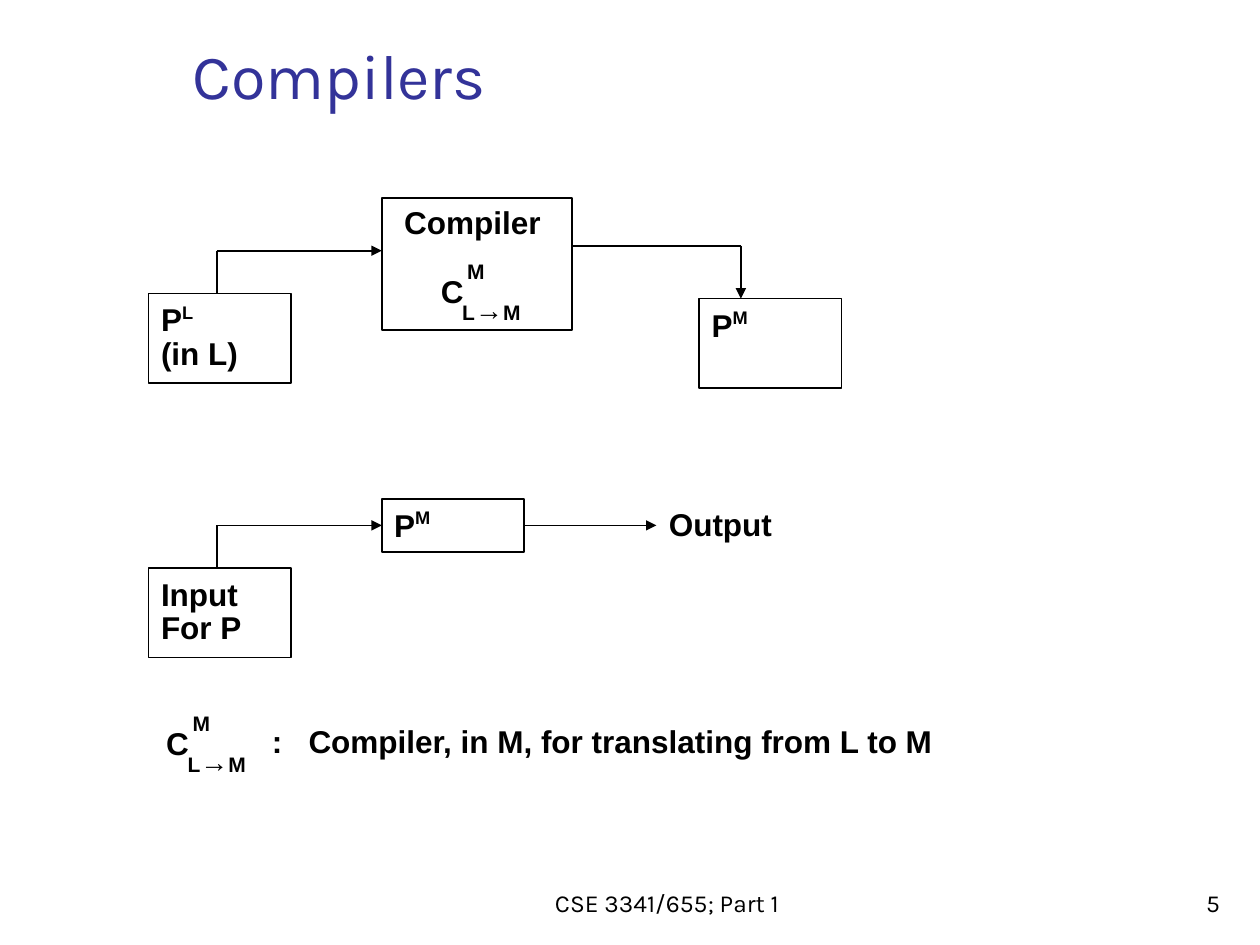
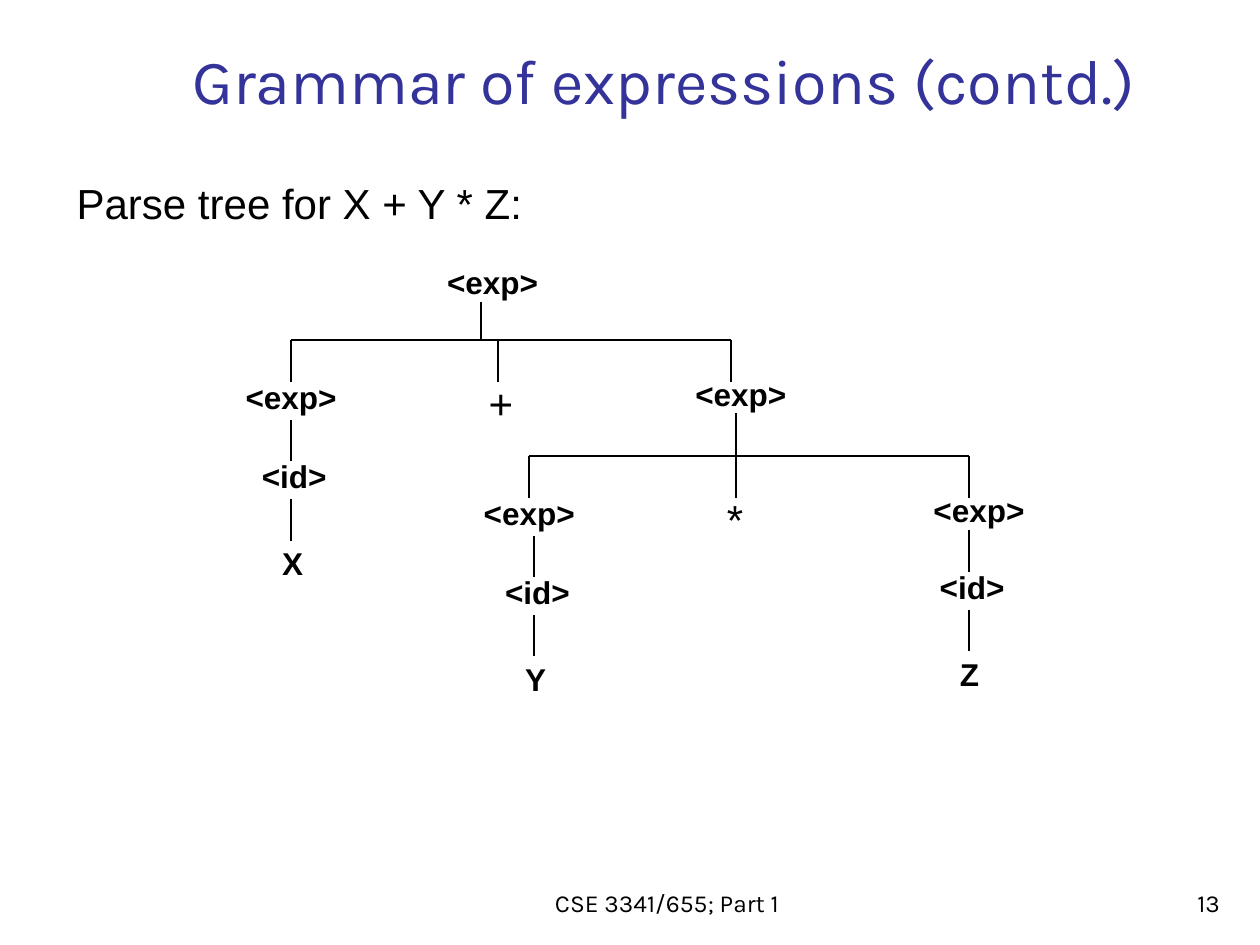
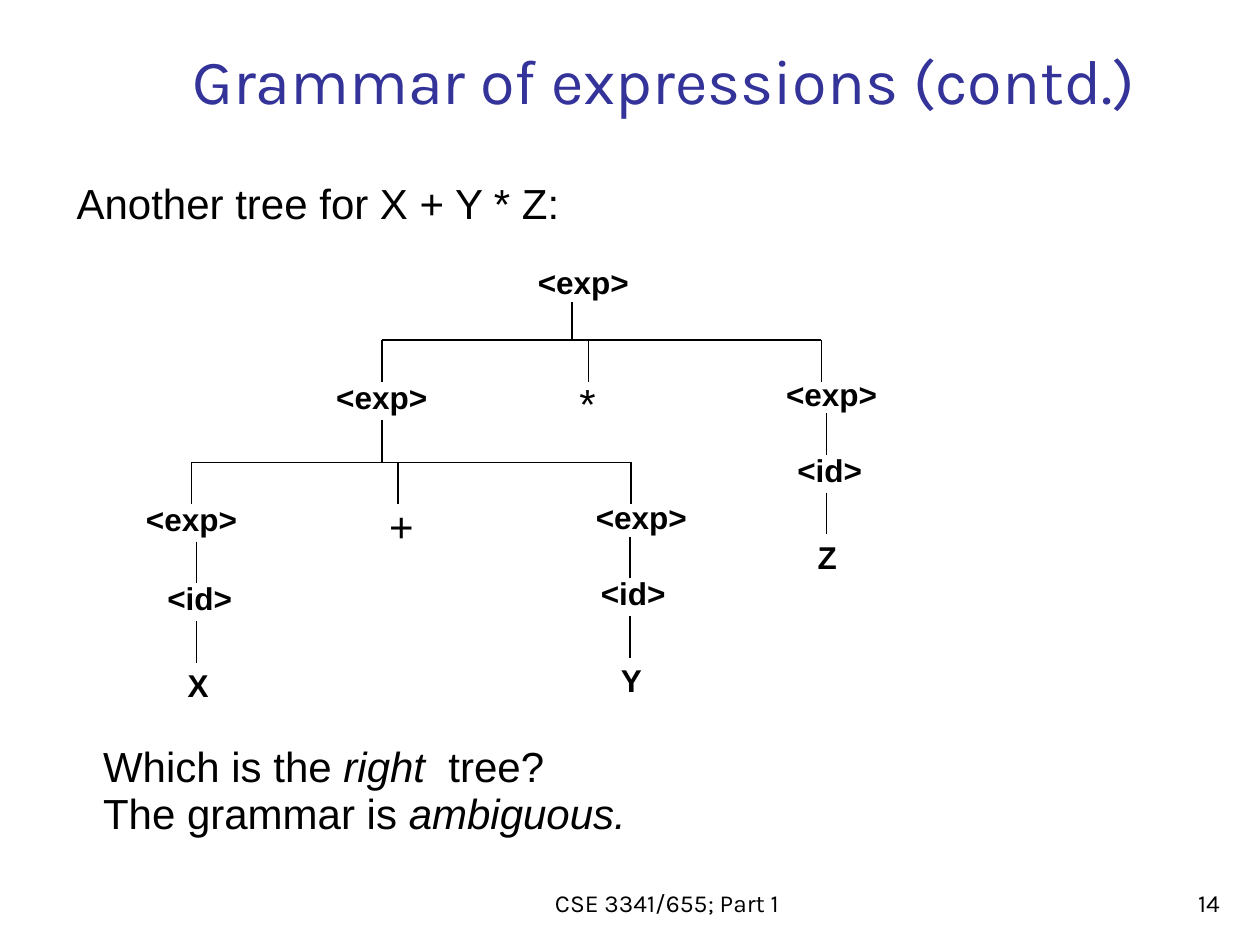
"""Build three lecture slides on compilers and expression grammars."""
from lxml import etree
from pptx import Presentation
from pptx import util as u
from pptx.dml.color import RGBColor
from pptx.enum import shapes, text
from pptx.oxml.ns import qn

PX = 9144
BLACK, NAVY, WHITE = "000000", "333399", "FFFFFF"
HEADING_FONT, BODY_FONT = "Karla", "Arial"
COURSE = "CSE 3341/655; Part 1"
DROP, BRANCH_WIDTH, OPERATOR_OFFSET = 33, 349, 164


def px(length):
    """Turn pixels into EMU."""
    return u.Emu(length * PX)


def color(hex_code):
    """Turn a hex string into a colour."""
    return RGBColor.from_string(hex_code)


def write(frame, *paragraphs, size=18, bold=False, font=BODY_FONT, ink=BLACK,
          align=text.PP_ALIGN.LEFT, anchor=text.MSO_ANCHOR.TOP,
          leading=(), spaced=True):
    """Fill a frame with paragraphs, each a string or a list of (text, changes)."""
    frame.word_wrap = True
    frame.vertical_anchor = anchor
    for index, content in enumerate(paragraphs):
        line = frame.add_paragraph() if index else frame.paragraphs[0]
        line.alignment = align
        if leading:
            line.line_spacing = u.Pt(leading[index])
        if spaced:
            line.space_before = u.Pt(0)
            before = line._p.pPr.find(qn("a:spcBef"))
            before.remove(before[0])
            etree.SubElement(before, qn("a:spcPct"), val="50000")
        pieces = [(content, {})] if isinstance(content, str) else content
        for words, changes in pieces:
            run = line.add_run()
            run.text = words
            run.font.name = font
            run.font.size = u.Pt(changes.get("size", size))
            run.font.bold = changes.get("bold", bold)
            run.font.italic = changes.get("italic", False)
            run.font.color.rgb = color(ink)
            if "raised" in changes:
                run.font._element.set("baseline", str(changes["raised"] * 1000))


class Deck:
    """Hold the shared style and the current slide."""

    def __init__(self):
        """Start an empty deck."""
        self.show = Presentation()
        self.show.slide_width, self.show.slide_height = px(1000), px(750)
        self.slide = None

    def page(self, title, number, width, height):
        """Add a slide with its title, footer and number."""
        self.slide = self.show.slides.add_slide(self.show.slide_layouts[6])
        self.slide.background.fill.solid()
        self.slide.background.fill.fore_color.rgb = color(WHITE)
        heading = dict(font=HEADING_FONT, anchor=text.MSO_ANCHOR.BOTTOM, spaced=False)
        self.label(248, 682, 563, 51, COURSE, size=14,
                   align=text.PP_ALIGN.CENTER, **heading)
        self.label(770, 683, 208, 50, str(number), size=14,
                   align=text.PP_ALIGN.RIGHT, **heading)
        self.label(143, 14, width, height, title, size=36, ink=NAVY, **heading)

    def label(self, x, y, width, height, *paragraphs, **style):
        """Add a text box."""
        box = self.slide.shapes.add_textbox(px(x), px(y), px(width), px(height))
        write(box.text_frame, *paragraphs, **style)

    def box(self, x, y, width, height, *paragraphs, **style):
        """Add an outlined rectangle with bold text."""
        frame = self.slide.shapes.add_shape(
            shapes.MSO_SHAPE.RECTANGLE, px(x), px(y), px(width), px(height))
        frame.shadow.inherit = False
        frame.fill.background()
        frame.line.color.rgb = color(BLACK)
        frame.line.width = u.Pt(1)
        if paragraphs:
            write(frame.text_frame, *paragraphs, bold=True, **style)

    def path_line(self, *points, arrow=False):
        """Join points with straight lines, with an optional arrowhead at the end."""
        for start, end in zip(points, points[1:]):
            segment = self.slide.shapes.add_connector(
                shapes.MSO_CONNECTOR.STRAIGHT, *map(px, start + end))
            segment.line.color.rgb = color(BLACK)
            segment.line.width = u.Pt(1)
            properties = segment._element.spPr
            if arrow and end == points[-1]:
                etree.SubElement(properties.find(qn("a:ln")), qn("a:tailEnd"),
                                 type="triangle")
            etree.SubElement(properties, qn("a:effectLst"))

    def compiler_symbol(self, x, y):
        """Write C with its raised M and lowered L→M."""
        self.label(x + 21, y - 20, 34, 30, "M", size=12, bold=True)
        self.label(x + 17, y + 7, 101, 37,
                   [("L", {}), ("→", {"size": 16, "bold": False}), ("M", {})],
                   size=12, bold=True)
        self.label(x, y, 38, 31, "C", bold=True, leading=[15])

    def root(self, x):
        """Draw the top node of a parse tree and its stem."""
        self.label(x - 37, 204, 92, 40, "<exp>", bold=True)
        self.path_line((x, 240), (x, 270))

    def branch(self, x, y, operator):
        """Draw a bar with two expressions and the operator between them."""
        self.path_line((x, y), (x + BRANCH_WIDTH, y))
        for offset in (0, OPERATOR_OFFSET, BRANCH_WIDTH):
            self.path_line((x + offset, y), (x + offset, y + DROP))
        self.label(x - 46, y + 25, 109, 40, "<exp>", bold=True)
        self.label(x + 311, y + 23, 92, 40, "<exp>", bold=True)
        self.label(x + 147, y + 25, 67, 50, operator, size=24)

    def identifier(self, x, y, name):
        """Draw the chain from an expression through <id> to a name."""
        for top in (y, y + 63):
            self.path_line((x, top), (x, top + DROP))
        self.label(x - 33, y + 25, 92, 40, "<id>", bold=True)
        self.label(x - 17, y + 94, 67, 40, name, bold=True)

    def tree_page(self, number, caption, root_x, branches, identifiers):
        """Add a slide with a captioned parse tree."""
        self.page("Grammar of expressions (contd.)", number, 790, 84)
        self.label(51, 136, 441, 50, caption, size=24)
        self.root(root_x)
        for place in branches:
            self.branch(*place)
        for place in identifiers:
            self.identifier(*place)


def compilers(deck):
    """Show how a compiler translates a program that is then run."""
    deck.page("Compilers", 5, 714, 80)
    machine_program = [("P", {}), ("M", {"raised": 40})]
    source_program = [("P", {}), ("L", {"raised": 40})]

    deck.label(311, 165, 143, 31, "Compiler", bold=True, leading=[15])
    deck.compiler_symbol(340, 220)
    deck.box(303, 157, 151, 105)
    deck.box(118, 233, 113, 71, source_program, "(in L)", leading=[22, 10])
    deck.box(555, 237, 113, 71, machine_program, leading=[22])
    deck.path_line((172, 233), (172, 199), (303, 199), arrow=True)
    deck.path_line((454, 195), (588, 195), (588, 237), arrow=True)

    deck.box(118, 451, 113, 71, "Input", "For P", leading=[22, 10])
    deck.box(303, 396, 113, 42, machine_program, leading=[22])
    deck.path_line((172, 451), (172, 417), (303, 417), arrow=True)
    deck.path_line((416, 417), (521, 417), arrow=True)
    deck.label(521, 396, 151, 40, "Output", bold=True)

    deck.compiler_symbol(122, 579)
    deck.label(206, 568, 30, 40, ":", bold=True)
    deck.label(235, 568, 551, 40,
               "Compiler, in M, for translating from L to M", bold=True)


def product_first_tree(deck):
    """Show the tree that groups Y * Z."""
    deck.tree_page(13, "Parse tree for X + Y * Z:", 382,
                   [(231, 270, "+"), (420, 362, "*")],
                   [(231, 333, "X"), (424, 425, "Y"), (769, 421, "Z")])
    deck.path_line((584, 328), (584, 362))


def sum_first_tree(deck):
    """Show the tree that groups X + Y, and the question it raises."""
    deck.tree_page(14, "Another tree for X + Y * Z:", 454,
                   [(303, 270, "*"), (152, 367, "+")],
                   [(156, 430, "X"), (500, 426, "Y"), (656, 328, "Z")])
    deck.path_line((303, 333), (303, 367))
    deck.label(72, 602, 773, 72,
               [("Which is the ", {}), ("right ", {"italic": True}), (" tree?", {})],
               [("The grammar is ", {}), ("ambiguous.", {"italic": True})],
               size=24, leading=[15, 15])


def main():
    """Build and save the deck."""
    deck = Deck()
    compilers(deck)
    product_first_tree(deck)
    sum_first_tree(deck)
    deck.show.save("out.pptx")


if __name__ == "__main__":
    main()
